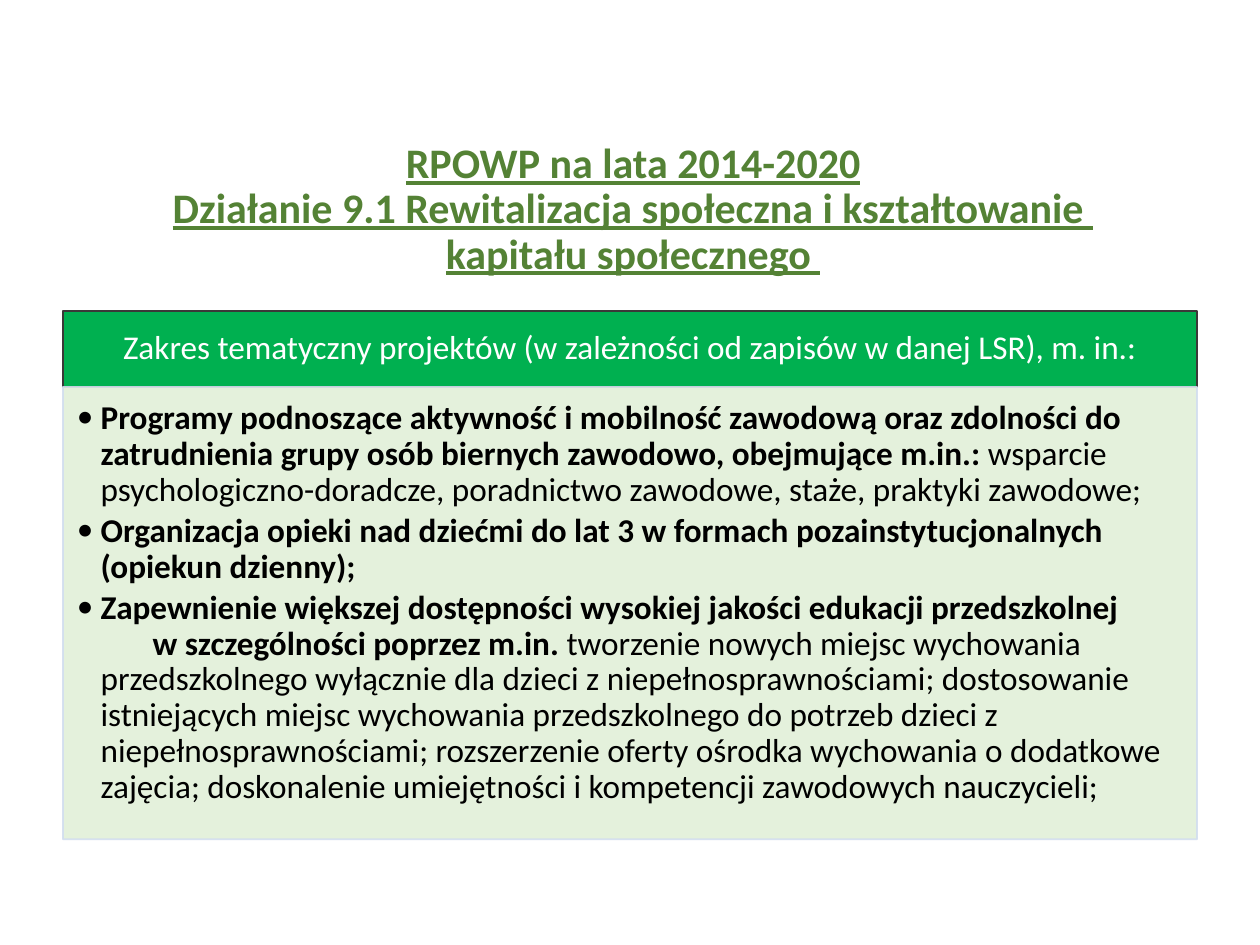
import pptx
import pptx.util
import pptx.dml.color
import pptx.enum.shapes
import pptx.enum.text
import pptx.oxml.ns
from lxml import etree

Cm, Pt = pptx.util.Cm, pptx.util.Pt
RGB = pptx.dml.color.RGBColor
ANCHOR = pptx.enum.text.MSO_ANCHOR
ALIGN = pptx.enum.text.PP_ALIGN
qn = pptx.oxml.ns.qn

OLIVE = RGB(0x54, 0x82, 0x35)
GREEN = RGB(0x00, 0xB0, 0x50)
DARK = RGB(0x3B, 0x38, 0x38)
PALE = RGB(0xE2, 0xF0, 0xD9)
BLUE = RGB(0xD2, 0xDE, 0xEF)
WHITE = RGB(0xFF, 0xFF, 0xFF)
BLACK = RGB(0, 0, 0)

LEFT, WIDTH = 1.27, 22.86
HEAD_TOP, HEAD_H, BODY_H = 6.27, 1.53, 9.12

TITLE = ("RPOWP na lata 2014-2020\v"
         "Działanie 9.1 Rewitalizacja społeczna i kształtowanie \v"
         "kapitału społecznego ")
HEAD = "Zakres tematyczny projektów (w zależności od zapisów w danej LSR), m. in.:"
# Each item: bold lead, plain rest
ITEMS = [
    ("Programy podnoszące aktywność i mobilność zawodową oraz zdolności do "
     "zatrudnienia grupy osób biernych zawodowo, obejmujące m.in.: ",
     "wsparcie psychologiczno-doradcze, poradnictwo zawodowe, staże, "
     "praktyki zawodowe;"),
    ("Organizacja opieki nad dziećmi do lat 3 w formach pozainstytucjonalnych "
     "(opiekun dzienny);", ""),
    ("Zapewnienie większej dostępności wysokiej jakości edukacji "
     "przedszkolnej\v\tw szczególności poprzez m.in. ",
     "tworzenie nowych miejsc wychowania przedszkolnego wyłącznie dla dzieci "
     "z niepełnosprawnościami; dostosowanie istniejących miejsc wychowania "
     "przedszkolnego do potrzeb dzieci z niepełnosprawnościami; rozszerzenie "
     "oferty ośrodka wychowania o dodatkowe zajęcia; doskonalenie "
     "umiejętności i kompetencji zawodowych nauczycieli;"),
]


def style(run, size, color, bold=False, under=False):
    font = run.font
    font.name, font.size, font.bold = "Calibri", Pt(size), bold
    font.underline = under
    font.color.rgb = color


def inset(frame, left, top, right, bottom):
    frame.word_wrap = True
    frame.margin_left, frame.margin_top = Cm(left), Cm(top)
    frame.margin_right, frame.margin_bottom = Cm(right), Cm(bottom)


def center(frame, text, size, color, **marks):
    frame.vertical_anchor = ANCHOR.MIDDLE
    frame.text = text
    para = frame.paragraphs[0]
    para.alignment, para.line_spacing = ALIGN.CENTER, 0.9
    for run in para.runs:
        style(run, size, color, **marks)


def panel(slide, top, height, fill, line):
    box = slide.shapes.add_shape(pptx.enum.shapes.MSO_SHAPE.RECTANGLE,
                                 Cm(LEFT), Cm(top), Cm(WIDTH), Cm(height))
    box.shadow.inherit = False
    box.fill.solid()
    box.fill.fore_color.rgb = fill
    box.line.color.rgb = line
    box.line.width = Pt(1)
    return box


def fade(box, share):
    for color in box._element.spPr.iter(qn("a:srgbClr")):
        etree.SubElement(color, qn("a:alpha"), val=str(share * 1000))


def bullet(para, lead, rest):
    props = para._p.get_or_add_pPr()
    props.set("marL", str(Cm(0.48)))
    props.set("indent", str(Cm(-0.48)))
    etree.SubElement(props, qn("a:buFont"), typeface="Calibri")
    etree.SubElement(props, qn("a:buChar"), char="•")
    tabs = etree.SubElement(props, qn("a:tabLst"))
    etree.SubElement(tabs, qn("a:tab"), pos=str(Cm(1.53)), algn="l")
    para.alignment = ALIGN.LEFT
    para.line_spacing, para.space_after = 0.9, Pt(2.85)
    para.text = lead
    for run in para.runs:
        style(run, 19, BLACK, bold=True)
    if rest:
        run = para.add_run()
        run.text = rest
        style(run, 19, BLACK)


def main():
    deck = pptx.Presentation()
    deck.slide_width, deck.slide_height = Cm(25.4), Cm(19.05)
    slide = deck.slides.add_slide(deck.slide_layouts[6])

    # Title
    title = slide.shapes.add_textbox(Cm(1.07), Cm(2.82), Cm(23.39), Cm(2.84))
    title.text_frame.word_wrap = True
    center(title.text_frame, TITLE, 24, OLIVE, bold=True, under=True)

    # Heading bar
    head = panel(slide, HEAD_TOP, HEAD_H, GREEN, DARK)
    inset(head.text_frame, 0.38, 0.2, 0.38, 0.2)
    center(head.text_frame, HEAD, 19, WHITE)

    # List of topics
    body = panel(slide, HEAD_TOP + HEAD_H, BODY_H, PALE, BLUE)
    fade(body, 90)
    frame = body.text_frame
    inset(frame, 0.28, 0.28, 0.38, 0.43)
    frame.vertical_anchor = ANCHOR.TOP
    for i, (lead, rest) in enumerate(ITEMS):
        para = frame.add_paragraph() if i else frame.paragraphs[0]
        bullet(para, lead, rest)

    deck.save("out.pptx")


if __name__ == "__main__":
    main()
